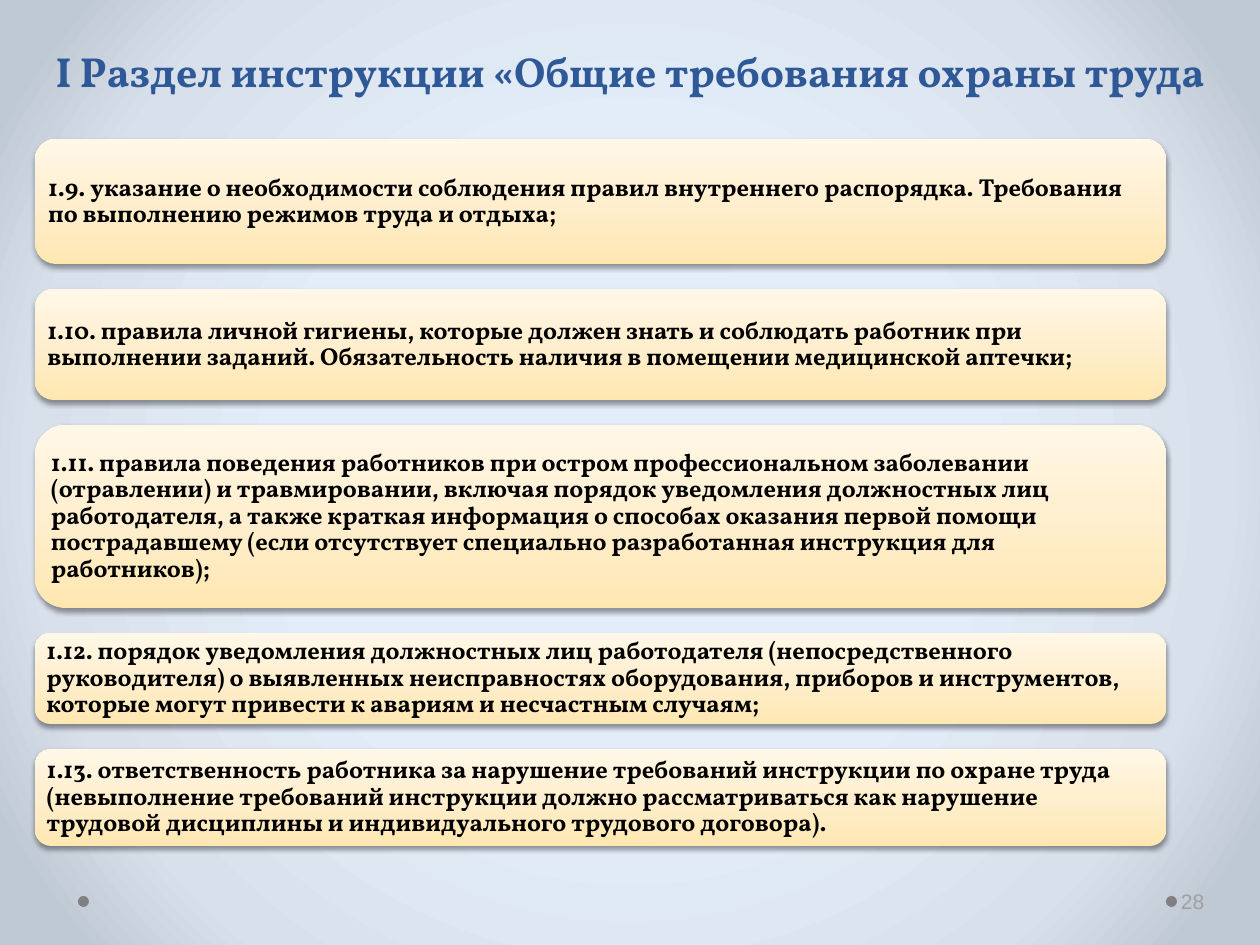
import dataclasses

import lxml.etree
import pptx
import pptx.dml.color
import pptx.enum.shapes
import pptx.enum.text
import pptx.oxml
import pptx.oxml.ns
import pptx.util

PX_PER_INCH = 126
DRAWING_NS = pptx.oxml.ns.nsdecls("a")
ANCHOR = pptx.enum.text.MSO_ANCHOR
ALIGN = pptx.enum.text.PP_ALIGN
SHAPES = pptx.enum.shapes.MSO_SHAPE


@dataclasses.dataclass(frozen=True)
class Theme:
    heading_font: str = "Vollkorn"
    number_font: str = "Arial"
    title_size: int = 24
    card_size: int = 14
    number_size: int = 12
    title: str = "2F5897"
    card_text: str = "000000"
    number: str = "A0A0A0"
    dot: str = "808080"
    shadow: str = "000000"
    card_stops: tuple = ((0, "FFE7B1"), (50, "FFEFCF"), (100, "FFF7E7"))
    background_stops: tuple = ((43, "E3EDF9"), (76, "D8E0EB"), (92, "BFC9D4"))


THEME = Theme()

TITLE = "I Раздел инструкции «Общие требования охраны труда"
# Card height in px and its wording
REQUIREMENTS = [
    (125, "1.9. указание о необходимости соблюдения правил внутреннего распорядка. "
          "Требования по выполнению режимов труда и отдыха;"),
    (111, "1.10. правила личной гигиены, которые должен знать и соблюдать работник при "
          "выполнении заданий. Обязательность наличия в помещении медицинской аптечки;"),
    (183, "1.11. правила поведения работников при остром профессиональном заболевании "
          "(отравлении) и травмировании, включая порядок уведомления должностных лиц "
          "работодателя, а также краткая информация о способах оказания первой помощи "
          "пострадавшему (если отсутствует специально разработанная инструкция для "
          "работников);"),
    (91, "1.12. порядок уведомления должностных лиц работодателя (непосредственного "
         "руководителя) о выявленных неисправностях оборудования, приборов и "
         "инструментов, которые могут привести к авариям и несчастным случаям;"),
    (97, "1.13. ответственность работника за нарушение требований инструкции по охране "
         "труда (невыполнение требований инструкции должно рассматриваться как нарушение "
         "трудовой дисциплины и индивидуального трудового договора)."),
]


def px(length):
    return pptx.util.Emu(round(length * 914400 / PX_PER_INCH))


def rgb(color):
    return pptx.dml.color.RGBColor.from_string(color)


def set_gradient(fill, properties, stops, direction):
    """Swap the solid fill of the given properties element for a gradient."""
    fill.solid()
    fill.fore_color.rgb = rgb(stops[0][1])
    stop_list = "".join(
        f'<a:gs pos="{position * 1000}"><a:srgbClr val="{color}"/></a:gs>'
        for position, color in stops)
    gradient = pptx.oxml.parse_xml(
        f'<a:gradFill {DRAWING_NS} rotWithShape="1">'
        f"<a:gsLst>{stop_list}</a:gsLst>{direction}</a:gradFill>")
    solid = properties.find(pptx.oxml.ns.qn("a:solidFill"))
    properties.replace(solid, gradient)


def add_shadow(shape):
    shape.shadow.inherit = False
    effects = shape.element.spPr.find(pptx.oxml.ns.qn("a:effectLst"))
    effects.append(pptx.oxml.parse_xml(
        f'<a:outerShdw {DRAWING_NS} blurRad="{pptx.util.Pt(3.1)}" '
        f'dist="{pptx.util.Pt(1.6)}" dir="5400000" rotWithShape="0">'
        f'<a:srgbClr val="{THEME.shadow}"><a:alpha val="38000"/></a:srgbClr>'
        "</a:outerShdw>"))


def write(shape, text, font, size, color, bold=False, align=ALIGN.LEFT):
    frame = shape.text_frame
    frame.word_wrap = True
    frame.text = text
    paragraph = frame.paragraphs[0]
    paragraph.alignment = align
    run_font = paragraph.runs[0].font
    run_font.name = font
    run_font.size = pptx.util.Pt(size)
    run_font.bold = bold
    run_font.color.rgb = rgb(color)
    return frame


def paint_background(slide):
    properties_tag = pptx.oxml.ns.qn("p:bgPr")
    fill = slide.background.fill
    fill.solid()
    properties = next(slide.element.iter(properties_tag))
    set_gradient(fill, properties, THEME.background_stops,
                 '<a:path path="circle"><a:fillToRect l="50000" t="50000" '
                 'r="50000" b="50000"/></a:path>')


def add_title(slide, left, top, width, height):
    title = slide.shapes.add_textbox(px(left), px(top), px(width), px(height))
    frame = write(title, TITLE, THEME.heading_font, THEME.title_size,
                  THEME.title, bold=True, align=ALIGN.CENTER)
    frame.auto_size = pptx.enum.text.MSO_AUTO_SIZE.SHAPE_TO_FIT_TEXT


def add_card(slide, text, left, top, width, height):
    card = slide.shapes.add_shape(SHAPES.ROUNDED_RECTANGLE,
                                  px(left), px(top), px(width), px(height))
    set_gradient(card.fill, card.element.spPr, THEME.card_stops,
                 '<a:lin ang="16200000" scaled="0"/>')
    card.line.fill.background()
    add_shadow(card)
    frame = write(card, text, THEME.heading_font, THEME.card_size,
                  THEME.card_text, bold=True)
    frame.vertical_anchor = ANCHOR.MIDDLE
    frame.margin_left = frame.margin_right = px(7)
    frame.margin_top = frame.margin_bottom = px(7)
    frame.paragraphs[0].line_spacing = 0.9


def add_cards(slide, left, top, width, gap):
    for height, text in REQUIREMENTS:
        add_card(slide, text, left, top, width, height)
        top += height + gap


def add_footer(slide, left, top, width, height):
    # Dots before the footer text and the page number
    dot_size, number_offset = 11, 1099
    for offset in (0, number_offset - dot_size):
        dot = slide.shapes.add_shape(SHAPES.OVAL, px(left + offset), px(top + 20),
                                     px(dot_size), px(dot_size))
        dot.shadow.inherit = False
        dot.fill.solid()
        dot.fill.fore_color.rgb = rgb(THEME.dot)
        dot.line.fill.background()
    # Page number
    number = slide.shapes.add_textbox(px(left + number_offset), px(top),
                                      px(width - number_offset), px(height))
    frame = write(number, "28", THEME.number_font, THEME.number_size, THEME.number)
    frame.vertical_anchor = ANCHOR.MIDDLE
    frame.margin_left = px(4)
    frame.margin_right = frame.margin_top = frame.margin_bottom = px(6)


def main():
    presentation = pptx.Presentation()
    presentation.slide_width = px(1260)
    presentation.slide_height = px(945)
    slide = presentation.slides.add_slide(presentation.slide_layouts[6])
    paint_background(slide)
    add_footer(slide, left=78, top=876, width=1176, height=50)
    add_title(slide, left=15, top=39, width=1230, height=63)
    add_cards(slide, left=35, top=139, width=1131, gap=25)
    presentation.save("out.pptx")


if __name__ == "__main__":
    main()
